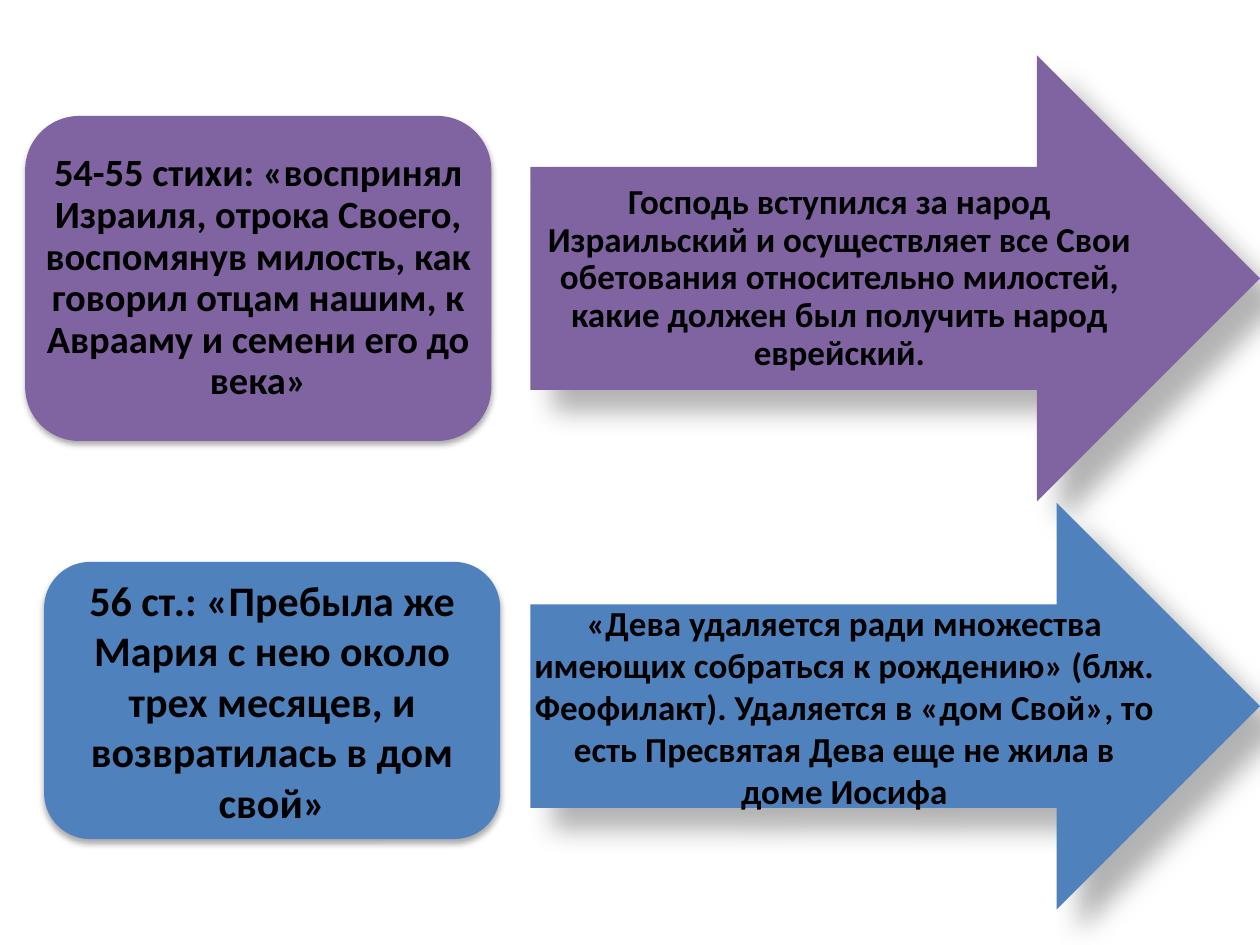
from dataclasses import dataclass

from lxml.etree import SubElement
from pptx import Presentation
from pptx.dml.color import RGBColor
from pptx.enum.shapes import MSO_SHAPE
from pptx.enum.text import MSO_ANCHOR, PP_ALIGN
from pptx.oxml.ns import qn
from pptx.util import Inches, Pt

COLOURS = {"purple": "8064A2", "blue": "4F81BD", "text": "000000", "shadow": "000000"}
FONT = "Calibri"


@dataclass(frozen=True)
class Shadow:
    opacity: int  # percent
    blur: float  # points
    distance: float  # points
    angle: int  # degrees


@dataclass(frozen=True)
class Block:
    kind: MSO_SHAPE
    box: tuple[float, float, float, float]
    fill: str
    shadow: Shadow
    text: str
    size: int
    line_spacing: float = 1.0
    side_inset: float = 0.0


VERSE_SHADOW = Shadow(32, 3.5, 2.2, 90)
ARROW_SHADOW = Shadow(30, 15, 18, 45)
ARROW_LEFT, ARROW_WIDTH = 4.21, 5.79

BLOCKS = [
    # Verses
    Block(MSO_SHAPE.ROUNDED_RECTANGLE, (0.35, 4.46, 3.62, 2.2), "blue", VERSE_SHADOW,
          "56 ст.: «Пребыла же Мария с нею около трех месяцев, и возвратилась в дом свой»",
          24, side_inset=0.1),
    Block(MSO_SHAPE.ROUNDED_RECTANGLE, (0.2, 0.92, 3.7, 2.58), "purple", VERSE_SHADOW,
          "54-55 стихи: «воспринял Израиля, отрока Своего, воспомянув милость, как "
          "говорил отцам нашим, к Аврааму и семени его до века»",
          22, line_spacing=0.9),
    # Explanations
    Block(MSO_SHAPE.RIGHT_ARROW, (ARROW_LEFT, 0.44, ARROW_WIDTH, 3.54), "purple", ARROW_SHADOW,
          "Господь вступился за народ Израильский и осуществляет все Свои обетования "
          "относительно милостей, какие должен был получить народ еврейский.",
          20, line_spacing=0.9),
    Block(MSO_SHAPE.RIGHT_ARROW, (ARROW_LEFT, 3.99, ARROW_WIDTH, 3.23), "blue", ARROW_SHADOW,
          "«Дева удаляется ради множества имеющих собраться к рождению» (блж. Феофилакт). "
          "Удаляется в «дом Свой», то есть Пресвятая Дева еще не жила в доме Иосифа",
          20),
]


def add_shadow(shape, shadow: Shadow) -> None:
    shape.shadow.inherit = False
    effects = shape._element.spPr.find(qn("a:effectLst"))
    outer = SubElement(effects, qn("a:outerShdw"), {
        "blurRad": str(Pt(shadow.blur)),
        "dist": str(Pt(shadow.distance)),
        "dir": str(shadow.angle * 60000),
        "algn": "ctr",
        "rotWithShape": "0",
    })
    colour = SubElement(outer, qn("a:srgbClr"), val=COLOURS["shadow"])
    SubElement(colour, qn("a:alpha"), val=str(shadow.opacity * 1000))


def add_block(slide, block: Block) -> None:
    shape = slide.shapes.add_shape(block.kind, *(Inches(value) for value in block.box))
    shape.fill.solid()
    shape.fill.fore_color.rgb = RGBColor.from_string(COLOURS[block.fill])
    shape.line.fill.background()
    add_shadow(shape, block.shadow)

    frame = shape.text_frame
    frame.word_wrap = True
    frame.vertical_anchor = MSO_ANCHOR.MIDDLE
    frame.margin_left = frame.margin_right = Inches(block.side_inset)
    frame.margin_top = frame.margin_bottom = Inches(0.05)

    paragraph = frame.paragraphs[0]
    paragraph.text = block.text
    paragraph.alignment = PP_ALIGN.CENTER
    paragraph.line_spacing = block.line_spacing
    paragraph.font.name = FONT
    paragraph.font.size = Pt(block.size)
    paragraph.font.bold = True
    paragraph.font.color.rgb = RGBColor.from_string(COLOURS["text"])


def main() -> None:
    presentation = Presentation()
    presentation.slide_width = Inches(10)
    presentation.slide_height = Inches(7.5)
    slide = presentation.slides.add_slide(presentation.slide_layouts[6])
    for block in BLOCKS:
        add_block(slide, block)
    presentation.save("out.pptx")


if __name__ == "__main__":
    main()
